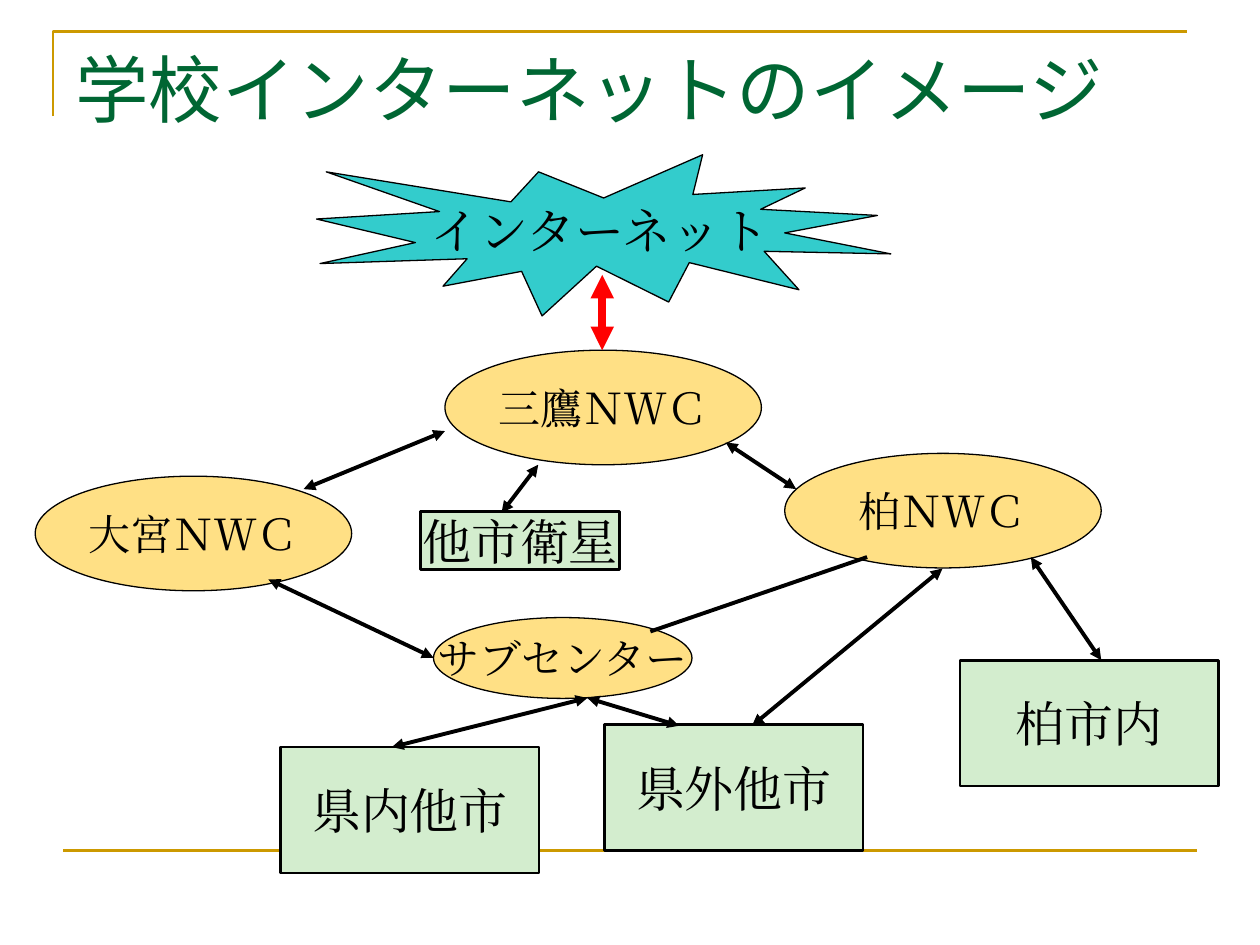
from lxml import etree
from pptx import Presentation
from pptx import util as u
from pptx.dml.color import RGBColor
from pptx.enum import shapes, text
from pptx.oxml.ns import qn

GOLD = RGBColor(0xCC, 0x99, 0x00)
GREEN = RGBColor(0x00, 0x66, 0x33)
TEAL = RGBColor(0x33, 0xCC, 0xCC)
YELLOW = RGBColor(0xFF, 0xE0, 0x85)
MINT = RGBColor(0xD3, 0xED, 0xCE)
BLACK = RGBColor(0x00, 0x00, 0x00)
RED = RGBColor(0xFF, 0x00, 0x00)

SHAPE = shapes.MSO_SHAPE
NWC_SIZE = (6.38, 2.31)
CITY_SIZE = (5.21, 2.54)


class Diagram:
    title_font = "Noto Sans"
    body_font = "TeX Gyre Pagella"

    def __init__(self, slide):
        self.s = slide

    def run(self, p, words, size, font, color):
        r = p.add_run()
        r.text = words
        r.font.size = u.Pt(size)
        r.font.name = font
        r.font.color.rgb = color
        etree.SubElement(r.font._element, qn("a:ea"), typeface=font)

    def outline(self, sp, color, width):
        sp.line.color.rgb = color
        sp.line.width = u.Pt(width)

    def title(self, words, pos, size):
        sp = self.s.shapes.add_textbox(*map(u.Cm, pos + size))
        tf = sp.text_frame
        tf.word_wrap = True
        self.run(tf.paragraphs[0], words, 42, self.title_font, GREEN)

    def node(self, kind, words, pos, size, fill, font_size, width=0.75):
        sp = self.s.shapes.add_shape(kind, *map(u.Cm, pos + size))
        sp.shadow.inherit = False
        sp.fill.solid()
        sp.fill.fore_color.rgb = fill
        self.outline(sp, BLACK, width)
        tf = sp.text_frame
        tf.word_wrap = False
        tf.vertical_anchor = text.MSO_ANCHOR.MIDDLE
        p = tf.paragraphs[0]
        p.alignment = text.PP_ALIGN.CENTER
        self.run(p, words, font_size, self.body_font, BLACK)

    def ellipse(self, words, pos, size=NWC_SIZE):
        self.node(SHAPE.OVAL, words, pos, size, YELLOW, 24)

    def box(self, words, pos, size=CITY_SIZE):
        self.node(SHAPE.RECTANGLE, words, pos, size, MINT, 28, 1.5)

    def line(self, start, end, color=BLACK, width=2.25, arrows=True):
        sp = self.s.shapes.add_connector(
            shapes.MSO_CONNECTOR.STRAIGHT, *map(u.Cm, start + end))
        self.outline(sp, color, width)
        if arrows:
            ln = sp.line._get_or_add_ln()
            for tag in ("a:headEnd", "a:tailEnd"):
                etree.SubElement(ln, qn(tag), type="triangle")
        etree.SubElement(sp._element.spPr, qn("a:effectLst"))

    def corner(self, points):
        start, *rest = [tuple(map(u.Cm, point)) for point in points]
        fb = self.s.shapes.build_freeform(*start)
        fb.add_line_segments(rest, close=False)
        sp = fb.convert_to_shape()
        sp.shadow.inherit = False
        sp.fill.background()
        self.outline(sp, GOLD, 1.5)


def main():
    prs = Presentation()
    prs.slide_width, prs.slide_height = u.Cm(25.4), u.Cm(19.05)
    d = Diagram(prs.slides.add_slide(prs.slide_layouts[6]))

    d.corner([(1.07, 2.34), (1.07, 0.64), (23.93, 0.64)])
    d.line((1.27, 17.15), (24.13, 17.15), GOLD, 1.5, arrows=False)
    d.title("学校インターネットのイメージ", (1.27, 0.76), (22.86, 3.18))

    d.node(SHAPE.EXPLOSION1, "インターネット", (6.38, 3.12), (11.58, 3.25), TEAL, 28)
    d.ellipse("三鷹ＮＷＣ", (8.97, 7.06))
    d.ellipse("柏ＮＷＣ", (15.82, 9.14))
    d.ellipse("大宮ＮＷＣ", (0.71, 9.6))
    d.ellipse("サブセンター", (8.74, 12.45), (5.21, 1.63))

    d.box("他市衛星", (8.48, 10.31), (4.01, 1.17))
    d.box("柏市内", (19.35, 13.31))
    d.box("県外他市", (12.19, 14.61))
    d.box("県内他市", (5.66, 15.06))

    sub_center = (11.84, 14.07)
    for start, end in [
        ((7.9, 15.06), sub_center),
        ((22.2, 13.31), (20.78, 11.23)),
        ((8.74, 13.26), (5.41, 11.68)),
        ((10.11, 10.34), (10.85, 9.37)),
        ((6.12, 9.86), (8.97, 8.69)),
        ((16.05, 9.86), (14.63, 8.92)),
        ((15.16, 14.63), (19, 11.46)),
        (sub_center, (13.69, 14.63)),
    ]:
        d.line(start, end)
    d.line((17.48, 11.23), (13.11, 12.73), arrows=False)
    d.line((12.14, 7.06), (12.14, 5.54), RED, 4.5)

    prs.save("out.pptx")


if __name__ == "__main__":
    main()
